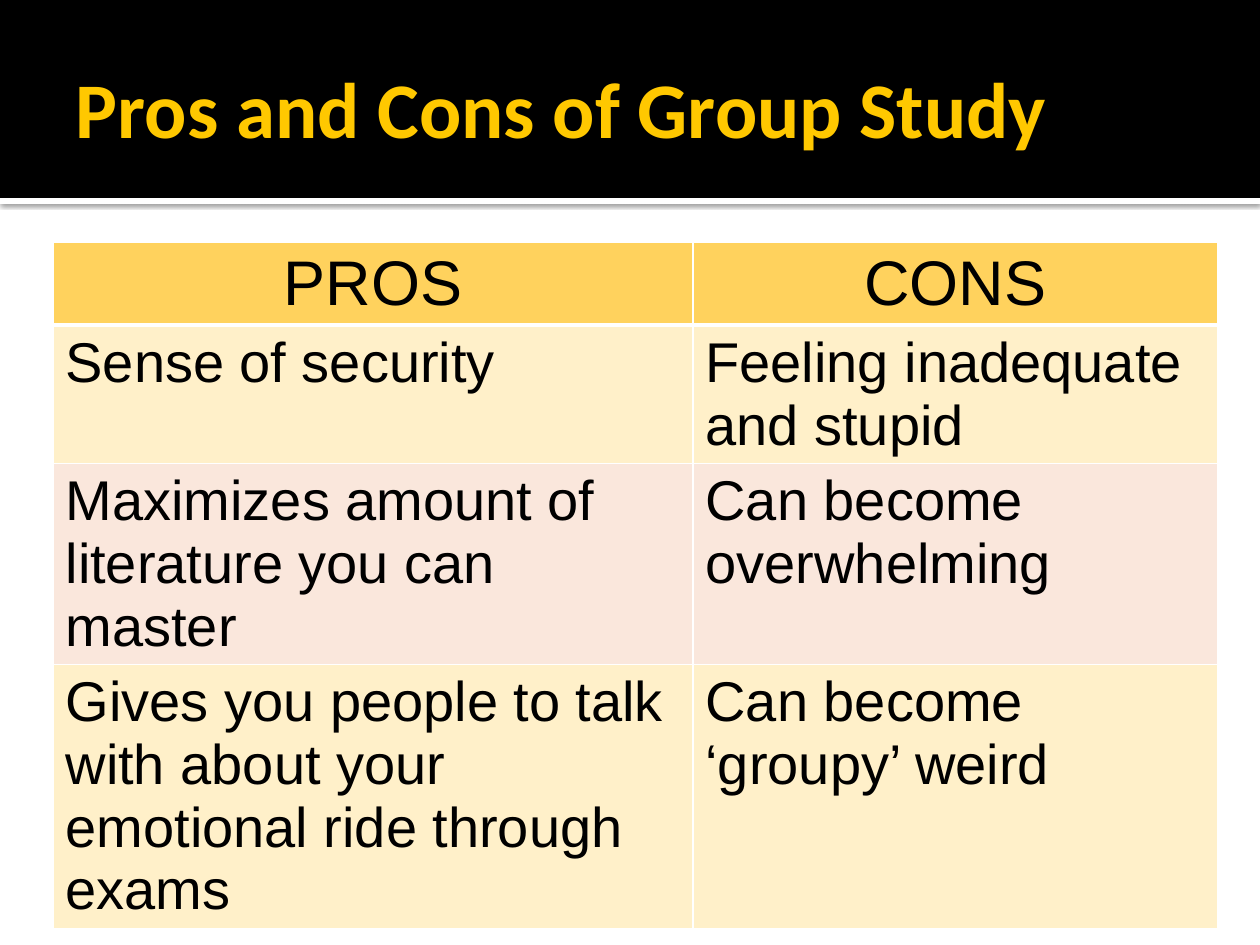
from lxml.etree import SubElement
from pptx import Presentation
from pptx.dml.color import RGBColor
from pptx.enum.shapes import MSO_SHAPE
from pptx.enum.text import MSO_ANCHOR, MSO_AUTO_SIZE, PP_ALIGN
from pptx.oxml.ns import qn
from pptx.util import Pt

SCALE = 914400 / 126
HUES = {
    "black": "000000",
    "white": "FFFFFF",
    "gold": "FFC800",
    "head": "FFD25D",
    "cream": "FFF0C9",
    "blush": "FAE7DC",
}
ROWS = [
    ("PROS", "CONS"),
    ("Sense of security", "Feeling inadequate and stupid"),
    ("Maximizes amount of literature you can master", "Can become overwhelming"),
    (
        "Gives you people to talk with about your emotional ride through exams",
        "Can become ‘groupy’ weird",
    ),
]


def px(*nums):
    return [round(num * SCALE) for num in nums]


def put(item, **vals):
    for name, val in vals.items():
        setattr(item, name, val)


def tint(fill, hue):
    fill.solid()
    fill.fore_color.rgb = RGBColor.from_string(HUES[hue])


class Deck:
    def __init__(self, wide, high):
        self.show = Presentation()
        self.show.slide_width, self.show.slide_height = px(wide, high)
        self.slide = self.show.slides.add_slide(self.show.slide_layouts[5])
        tint(self.slide.background.fill, "white")

    def label(self, frame, text, face, size, hue, bold=False, align=PP_ALIGN.LEFT):
        frame.text = text
        para = frame.paragraphs[0]
        para.alignment = align
        font = para.runs[0].font
        put(font, name=face, size=Pt(size), bold=bold)
        font.color.rgb = RGBColor.from_string(HUES[hue])

    def bar(self, box, hue, shade=False):
        bar = self.slide.shapes.add_shape(MSO_SHAPE.RECTANGLE, *px(*box))
        tint(bar.fill, hue)
        bar.line.fill.background()
        bar.shadow.inherit = False
        if shade:
            glow = SubElement(
                bar._element.spPr.find(qn("a:effectLst")),
                qn("a:outerShdw"),
                blurRad=str(Pt(2.5)),
                dist=str(Pt(0.8)),
                dir="5400000",
                algn="tl",
                rotWithShape="0",
            )
            ink = SubElement(glow, qn("a:srgbClr"), val=HUES["black"])
            SubElement(ink, qn("a:alpha"), val="60000")

    def title(self, box, text):
        title = self.slide.shapes.title
        put(title, **dict(zip(("left", "top", "width", "height"), px(*box))))
        left, top, right, low = px(13, 6, 6, 6)
        put(
            title.text_frame,
            margin_left=left,
            margin_top=top,
            margin_right=right,
            margin_bottom=low,
            vertical_anchor=MSO_ANCHOR.MIDDLE,
            auto_size=MSO_AUTO_SIZE.NONE,
            word_wrap=True,
        )
        self.label(title.text_frame, text, "Calibri", 45, "gold", bold=True)
        self.slide.shapes._spTree.append(title._element)

    def edge(self, cell, low):
        props = cell._tc.get_or_add_tcPr()
        for side, size in zip("LRTB", (1, 1, 1, low)):
            line = SubElement(props, qn(f"a:ln{side}"), w=str(Pt(size)))
            fill = SubElement(line, qn("a:solidFill"))
            SubElement(fill, qn("a:srgbClr"), val=HUES["white"])

    def table(self, left, top, wides, high, rows):
        box = px(left, top, sum(wides), high * len(rows))
        table = self.slide.shapes.add_table(len(rows), len(wides), *box).table
        put(table, first_row=False, horz_banding=False)
        for col, wide in zip(table.columns, px(*wides)):
            col.width = wide
        for i, row in enumerate(rows):
            hue = ("blush", "cream")[i % 2] if i else "head"
            size, align = (32, PP_ALIGN.LEFT) if i else (36, PP_ALIGN.CENTER)
            for j, text in enumerate(row):
                cell = table.cell(i, j)
                self.edge(cell, 1 if i else 3)
                tint(cell.fill, hue)
                self.label(cell.text_frame, text, "Arial", size, "black", align=align)


def main():
    deck = Deck(1260, 945)
    deck.bar((0, 198, 1260, 6), "white", shade=True)
    deck.bar((0, 0, 1260, 198), "black")
    deck.title((63, 21, 1134, 173), "Pros and Cons of Group Study")
    deck.table(53, 242, (640, 525), 52, ROWS)
    deck.show.save("out.pptx")


if __name__ == "__main__":
    main()
